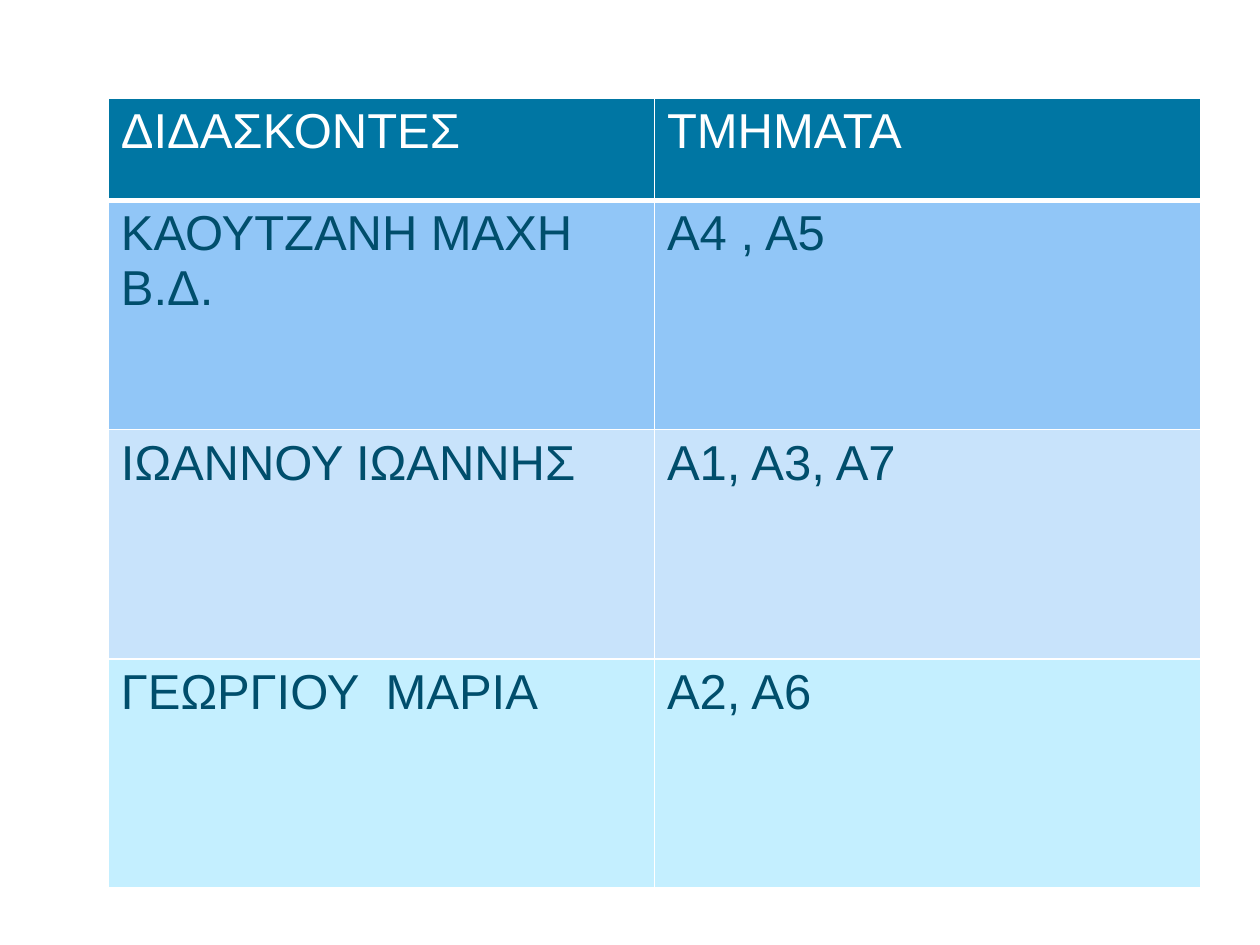
import pptx
import pptx.dml.color
import pptx.oxml
import pptx.util
from pptx.util import Inches

TEACHERS = [
    ("ΔΙΔΑΣΚΟΝΤΕΣ", "ΤΜΗΜΑΤΑ"),
    ("ΚΑΟΥΤΖΑΝΗ ΜΑΧΗ Β.Δ.", "Α4 , Α5"),
    ("ΙΩΑΝΝΟΥ ΙΩΑΝΝΗΣ", "Α1, Α3, Α7"),
    ("ΓΕΩΡΓΙΟΥ  ΜΑΡΙΑ", "Α2, Α6"),
]
ROW_FILLS = ["0076A3", "91C6F7", "C8E3FB", "C4EFFF"]
HEADER_HEIGHT = 0.81
TEACHER_HEIGHT = 1.82


def color(hex_value):
    return pptx.dml.color.RGBColor.from_string(hex_value)


def add_border(cell, side, points):
    properties = cell._tc.get_or_add_tcPr()
    border = pptx.oxml.parse_xml(
        f'<a:ln{side} xmlns:a="http://schemas.openxmlformats.org/drawingml/2006/main" '
        f'w="{pptx.util.Pt(points)}"><a:solidFill><a:srgbClr val="FFFFFF"/>'
        f"</a:solidFill></a:ln{side}>"
    )
    properties.append(border)


def format_cell(cell, text, fill, text_color, top, bottom):
    for side, points in (("L", 1), ("R", 1), ("T", top), ("B", bottom)):
        add_border(cell, side, points)
    cell.fill.solid()
    cell.fill.fore_color.rgb = color(fill)
    cell.text_frame.text = text
    font = cell.text_frame.paragraphs[0].runs[0].font
    font.name = "Arial"
    font.size = pptx.util.Pt(28)
    font.bold = False
    font.color.rgb = color(text_color)


def add_teacher_table(slide):
    height = HEADER_HEIGHT + 3 * TEACHER_HEIGHT
    teachers = slide.shapes.add_table(
        len(TEACHERS), 2, Inches(0.86), Inches(0.78), Inches(8.67), Inches(height)
    ).table
    for index, (texts, fill) in enumerate(zip(TEACHERS, ROW_FILLS)):
        is_header = index == 0
        teachers.rows[index].height = Inches(HEADER_HEIGHT if is_header else TEACHER_HEIGHT)
        text_color = "FFFFFF" if is_header else "004E6C"
        top = 3 if index == 1 else 1
        bottom = 3 if is_header else 1
        for column, text in enumerate(texts):
            format_cell(teachers.cell(index, column), text, fill, text_color, top, bottom)


def main():
    presentation = pptx.Presentation()
    presentation.slide_width = Inches(10)
    presentation.slide_height = Inches(7.5)
    slide = presentation.slides.add_slide(presentation.slide_layouts[6])
    add_teacher_table(slide)
    presentation.save("out.pptx")


if __name__ == "__main__":
    main()
